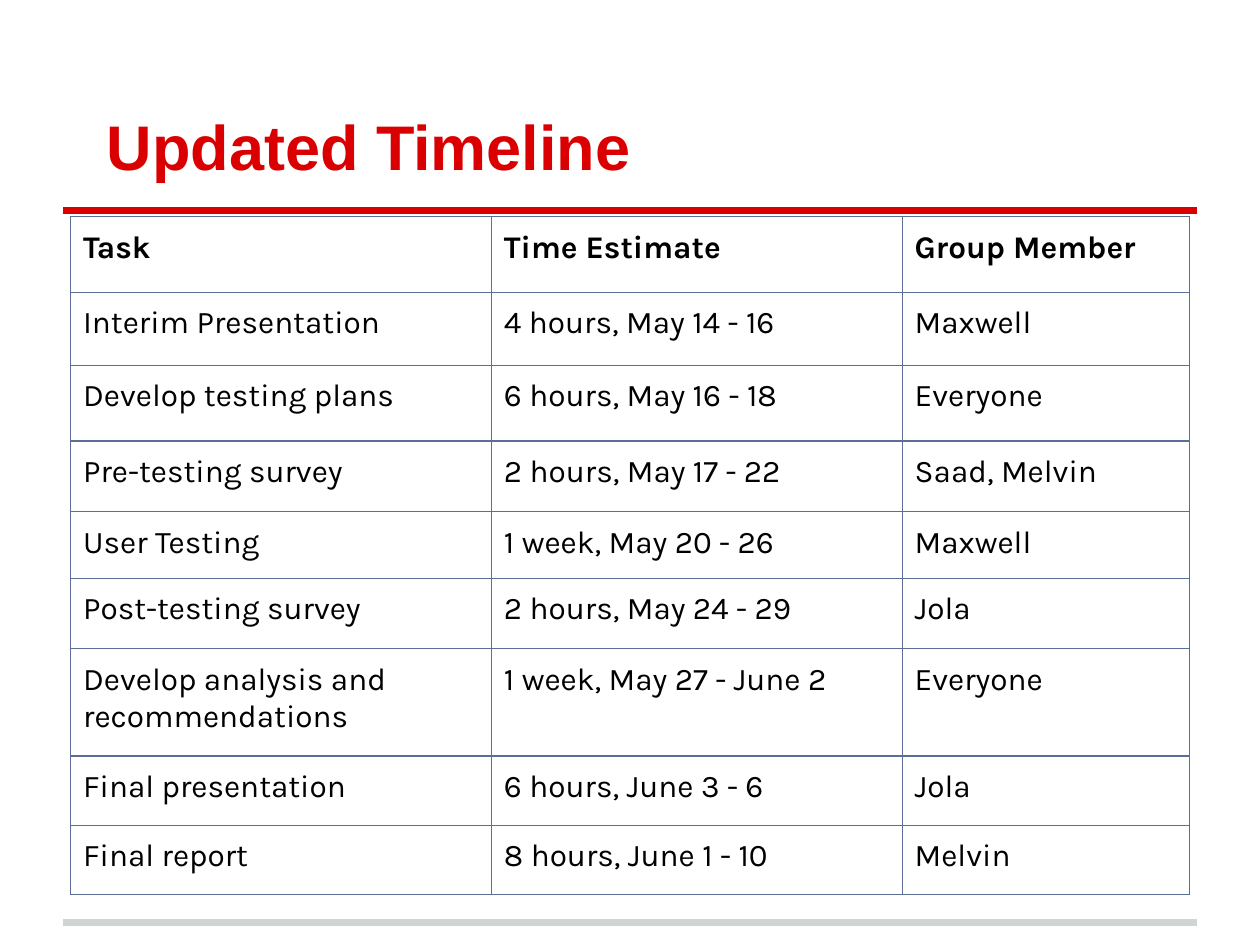
from dataclasses import dataclass

from lxml import etree
from pptx import Presentation
from pptx import util as u
from pptx.dml.color import RGBColor
from pptx.enum import shapes, text
from pptx.oxml import ns


@dataclass(frozen=True)
class Theme:
    red: str = "DA0002"
    grey: str = "CFD4D4"
    ink: str = "000000"
    grid: str = "5C6E95"
    head: str = "Arial"
    body: str = "Karla"
    title: float = 36
    cell: float = 18
    rule: float = 4
    edge: float = 0.75
    pad: float = 0.1


THEME = Theme()
COLS = [3.34, 3.26, 2.28]
ROWS = [
    (0.6, "Task", "Time Estimate", "Group Member"),
    (0.58, "Interim Presentation", "4 hours, May 14 - 16", "Maxwell"),
    (0.6, "Develop testing plans", "6 hours, May 16 - 18", "Everyone"),
    (0.56, "Pre-testing survey", "2 hours, May 17 - 22", "Saad, Melvin"),
    (0.53, "User Testing", "1 week, May 20 - 26", "Maxwell"),
    (0.56, "Post-testing survey", "2 hours, May 24 - 29", "Jola"),
    (0.85, "Develop analysis and recommendations", "1 week, May 27 - June 2", "Everyone"),
    (0.55, "Final presentation", "6 hours, June 3 - 6", "Jola"),
    (0.55, "Final report", "8 hours, June 1 - 10", "Melvin"),
]


def style(para, face, size, color, bold):
    for run in para.runs:
        run.font.name = face
        run.font.size = u.Pt(size)
        run.font.bold = bold
        run.font.color.rgb = RGBColor.from_string(color)


def inset(box):
    box.margin_left = box.margin_right = u.Inches(THEME.pad)
    box.margin_top = box.margin_bottom = u.Inches(THEME.pad)


def add_rule(slide, left, top, width, color):
    line = slide.shapes.add_connector(
        shapes.MSO_CONNECTOR.STRAIGHT,
        u.Inches(left), u.Inches(top), u.Inches(left + width), u.Inches(top))
    line.line.color.rgb = RGBColor.from_string(color)
    line.line.width = u.Pt(THEME.rule)
    etree.SubElement(line._element.spPr, ns.qn("a:effectLst"))


def add_title(slide, left, top, width, height, words):
    box = slide.shapes.add_textbox(*map(u.Inches, (left, top, width, height)))
    frame = box.text_frame
    frame.word_wrap = True
    frame.vertical_anchor = text.MSO_ANCHOR.BOTTOM
    inset(frame)
    frame.text = words
    para = frame.paragraphs[0]
    para._p.get_or_add_pPr().set("marL", str(u.Inches(0.25)))
    style(para, THEME.head, THEME.title, THEME.red, True)


def add_edges(cell):
    props = cell._tc.get_or_add_tcPr()
    for side in ("lnL", "lnR", "lnT", "lnB"):
        edge = etree.SubElement(props, ns.qn(f"a:{side}"), w=str(u.Pt(THEME.edge)))
        fill = etree.SubElement(edge, ns.qn("a:solidFill"))
        etree.SubElement(fill, ns.qn("a:srgbClr"), val=THEME.grid)


def add_plan(slide, left, top, cols, rows):
    width, height = sum(cols), sum(row[0] for row in rows)
    table = slide.shapes.add_table(
        len(rows), len(cols), *map(u.Inches, (left, top, width, height))).table
    table.first_row = table.horz_banding = False
    for col, size in zip(table.columns, cols):
        col.width = u.Inches(size)
    for r, (tall, *words) in enumerate(rows):
        table.rows[r].height = u.Inches(tall)
        for c, word in enumerate(words):
            cell = table.cell(r, c)
            inset(cell)
            add_edges(cell)
            cell.fill.background()
            cell.text_frame.text = word
            style(cell.text_frame.paragraphs[0], THEME.body, THEME.cell, THEME.ink, r == 0)


def main():
    deck = Presentation()
    deck.slide_width, deck.slide_height = u.Inches(10), u.Inches(7.5)
    slide = deck.slides.add_slide(deck.slide_layouts[6])
    add_rule(slide, 0.5, 7.32, 9, THEME.grey)
    add_rule(slide, 0.5, 1.67, 9, THEME.red)
    add_title(slide, 0.5, 0.3, 9, 1.25, "Updated Timeline")
    add_plan(slide, 0.56, 1.72, COLS, ROWS)
    deck.save("out.pptx")


if __name__ == "__main__":
    main()
